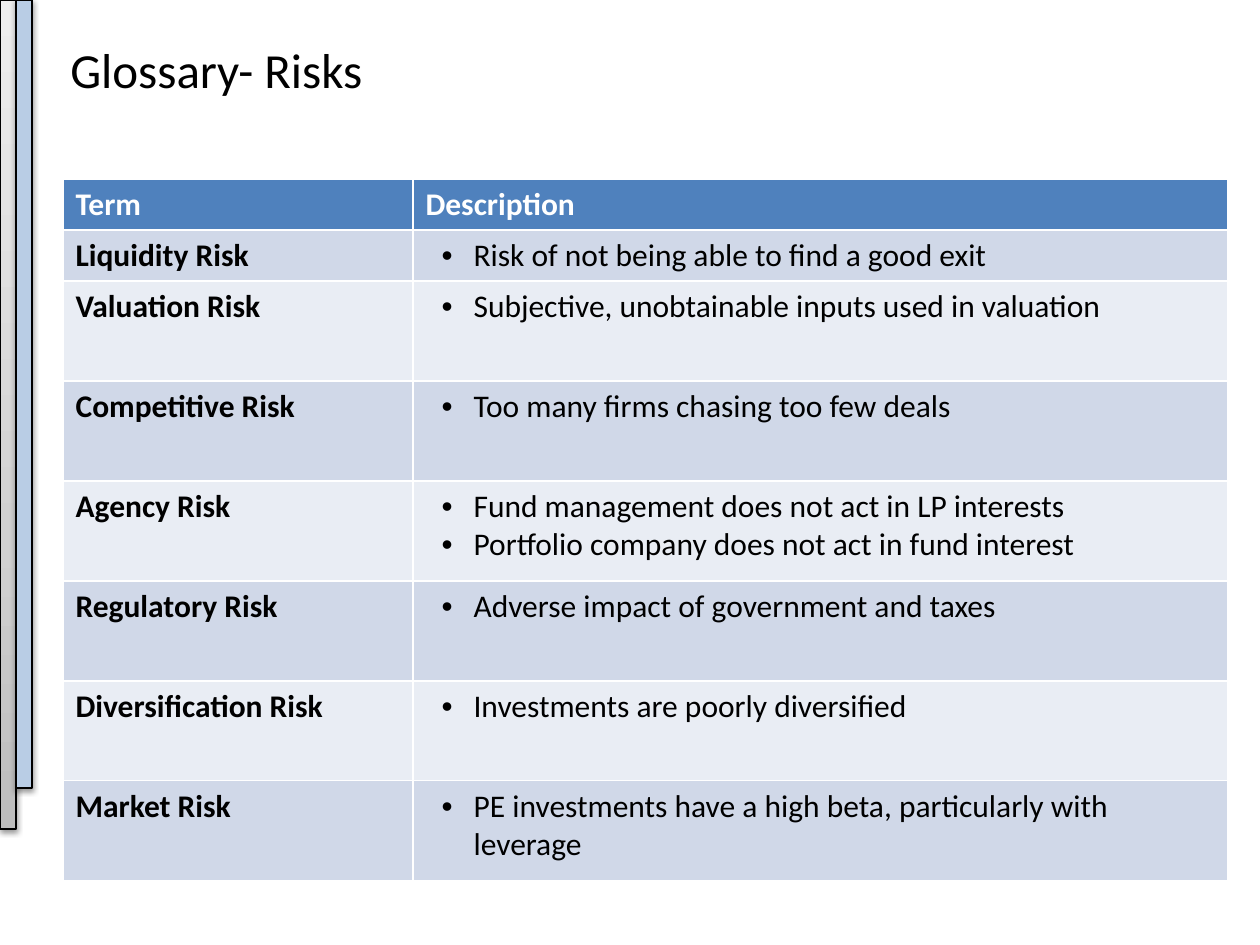
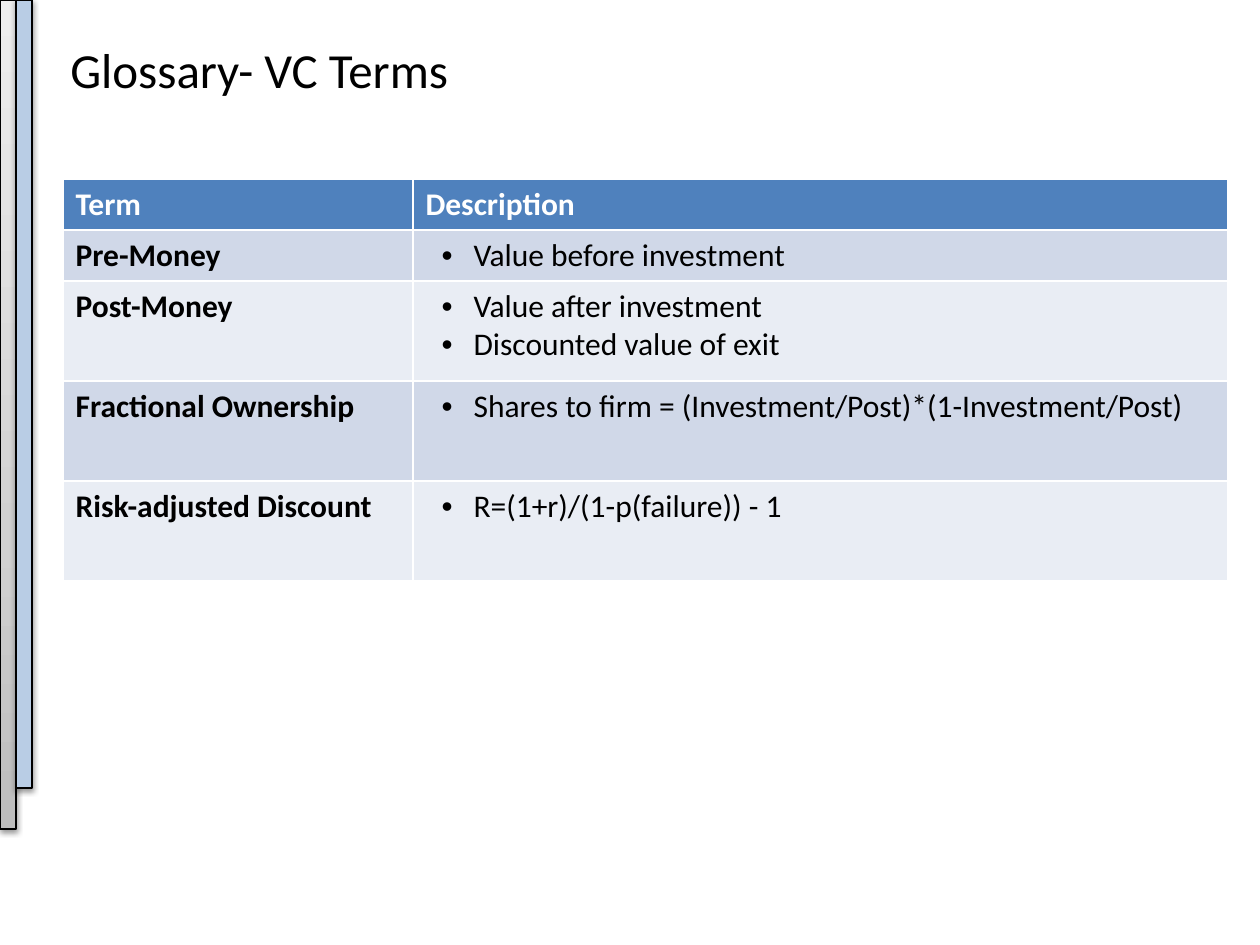
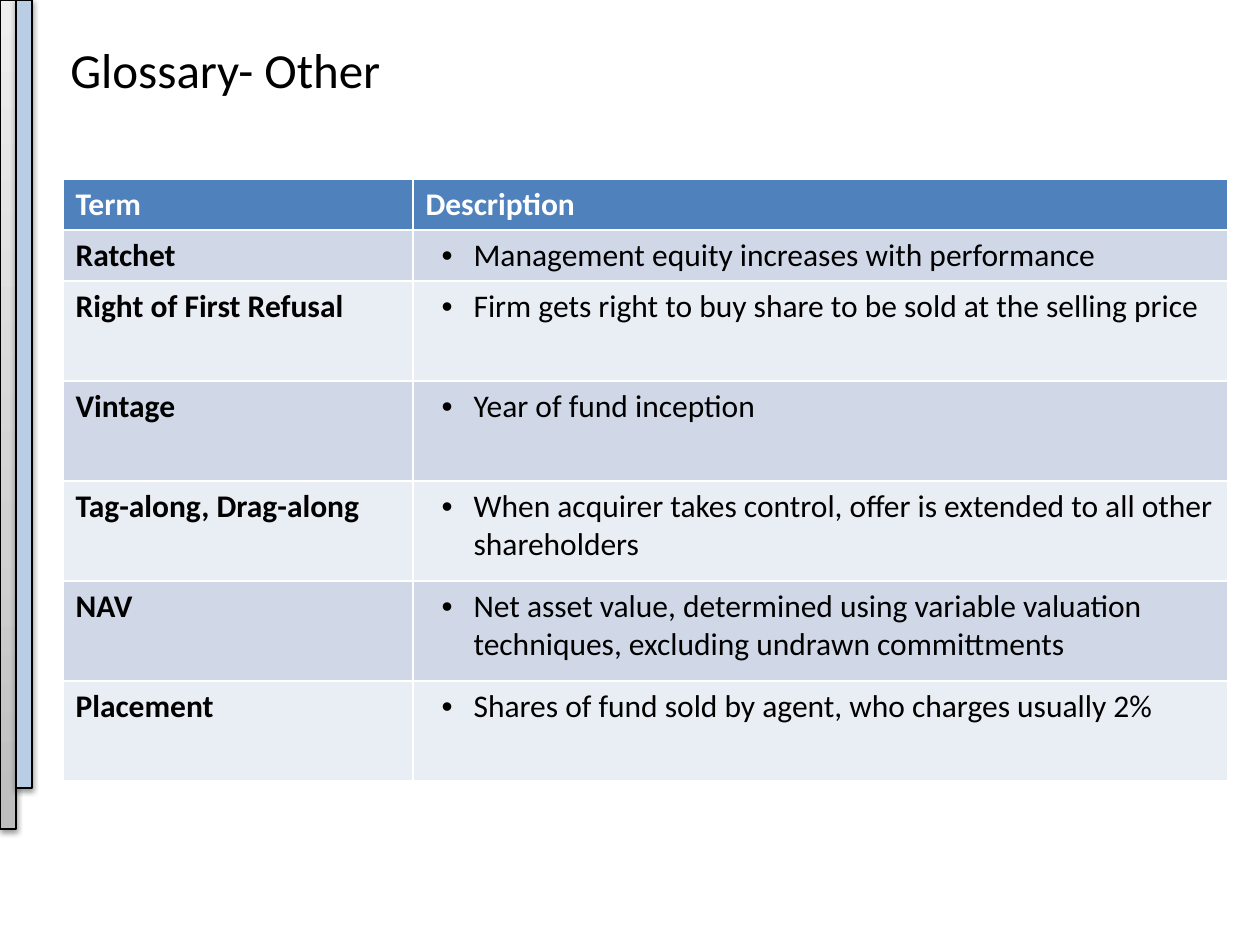
from copy import deepcopy
from dataclasses import dataclass

from lxml.etree import SubElement
from pptx import Presentation
from pptx.dml.color import RGBColor
from pptx.enum.shapes import MSO_SHAPE as Preset
from pptx.enum.text import MSO_ANCHOR as Anchor
from pptx.oxml.ns import qn
from pptx.shapes.autoshape import Shape
from pptx.slide import Slide
from pptx.table import _Cell as Cell
from pptx.text.text import _Paragraph as Paragraph
from pptx.util import Emu, Pt

PX_PER_INCH = 126
FONT = "Calibri"
BLACK, WHITE = "000000", "FFFFFF"
HEADER_FILL = "4F81BD"
ROW_FILLS = ("D0D8E8", "E9EDF4")
TITLE_SIZE, TABLE_SIZE = 28, 18
COLUMN_WIDTHS = (350, 815)
SHORT_ROW, TALL_ROW = 51, 100
HEADINGS = ("Term", "Description")


@dataclass(frozen=True)
class Box:
    left: int
    top: int
    width: int
    height: int


@dataclass(frozen=True)
class Band:
    box: Box
    stops: tuple[tuple[float, str], ...]


@dataclass(frozen=True)
class Entry:
    term: str
    points: tuple[str, ...]


@dataclass(frozen=True)
class Glossary:
    title: str
    entries: tuple[Entry, ...]


TITLE_BOX = Box(58, 21, 908, 95)
TABLE_LEFT, TABLE_TOP = 63, 179
BANDS = (
    Band(Box(0, 0, 16, 829), ((0, "BDBDBD"), (0.35, "D1D1D1"), (1, "EEEEEE"))),
    Band(Box(16, 0, 16, 788), ((0, "B9CDE5"),)),
)

GLOSSARIES = (
    Glossary("Glossary- Risks", (
        Entry("Liquidity Risk", ("Risk of not being able to find a good exit",)),
        Entry("Valuation Risk", ("Subjective, unobtainable inputs used in valuation",)),
        Entry("Competitive Risk", ("Too many firms chasing too few deals",)),
        Entry("Agency Risk", ("Fund management does not act in LP interests",
                              "Portfolio company does not act in fund interest")),
        Entry("Regulatory Risk", ("Adverse impact of government and taxes",)),
        Entry("Diversification Risk", ("Investments are poorly diversified",)),
        Entry("Market Risk",
              ("PE investments have a high beta, particularly with leverage",)),
    )),
    Glossary("Glossary- VC Terms", (
        Entry("Pre-Money", ("Value before investment",)),
        Entry("Post-Money", ("Value after investment", "Discounted value of exit")),
        Entry("Fractional Ownership",
              ("Shares to firm = (Investment/Post)*(1-Investment/Post)",)),
        Entry("Risk-adjusted Discount", ("R=(1+r)/(1-p(failure)) - 1",)),
    )),
    Glossary("Glossary- Other", (
        Entry("Ratchet", ("Management equity increases with performance",)),
        Entry("Right of First Refusal",
              ("Firm gets right to buy share to be sold at the selling price",)),
        Entry("Vintage", ("Year of fund inception",)),
        Entry("Tag-along, Drag-along",
              ("When acquirer takes control, offer is extended to all other shareholders",)),
        Entry("NAV", ("Net asset value, determined using variable valuation "
                      "techniques, excluding undrawn committments",)),
        Entry("Placement", ("Shares of fund sold by agent, who charges usually 2%",)),
    )),
)


def px(length: int) -> Emu:
    return Emu(round(length * 914400 / PX_PER_INCH))


def color(value: str) -> RGBColor:
    return RGBColor.from_string(value)


def place(box: Box) -> tuple[Emu, Emu, Emu, Emu]:
    return px(box.left), px(box.top), px(box.width), px(box.height)


def format_paragraph(paragraph: Paragraph, size: int, text_color: str, bold: bool) -> None:
    for run in paragraph.runs:
        run.font.name = FONT
        run.font.size = Pt(size)
        run.font.bold = bold
        run.font.color.rgb = color(text_color)


def add_bullet(paragraph: Paragraph) -> None:
    paragraph.level = 1
    properties = paragraph._p.get_or_add_pPr()
    properties.set("marL", str(px(48)))
    properties.set("indent", str(px(-32)))
    SubElement(properties, qn("a:buFont"), typeface="Arial")
    SubElement(properties, qn("a:buChar"), char="•")


def fill_upwards(shape: Shape, stops: tuple[tuple[float, str], ...]) -> None:
    """Fill with a gradient whose first stop is at the bottom."""
    shape.fill.gradient()
    shape.fill.gradient_angle = 90
    stop_list = shape.element.spPr.find(".//" + qn("a:gsLst"))
    while len(stop_list) < len(stops):
        stop_list.append(deepcopy(stop_list[0]))
    for stop, (position, value) in zip(shape.fill.gradient_stops, stops):
        stop.position = position
        stop.color.rgb = color(value)


def add_shadow(shape: Shape) -> None:
    shape.shadow.inherit = False
    effects = shape.element.spPr.find(qn("a:effectLst"))
    shadow = SubElement(effects, qn("a:outerShdw"), blurRad=str(Pt(3.1)),
                        dist=str(Pt(1.6)), dir="5400000", rotWithShape="0")
    shade = SubElement(shadow, qn("a:srgbClr"), val=BLACK)
    SubElement(shade, qn("a:alpha"), val="38000")


def add_band(slide: Slide, band: Band) -> None:
    shape = slide.shapes.add_shape(Preset.RECTANGLE, *place(band.box))
    if len(band.stops) > 1:
        fill_upwards(shape, band.stops)
    else:
        shape.fill.solid()
        shape.fill.fore_color.rgb = color(band.stops[0][1])
    shape.line.color.rgb = color(BLACK)
    shape.line.width = Pt(0.75)
    add_shadow(shape)


def add_title(slide: Slide, title: str) -> None:
    text_frame = slide.shapes.add_textbox(*place(TITLE_BOX)).text_frame
    text_frame.word_wrap = True
    text_frame.vertical_anchor = Anchor.MIDDLE
    text_frame.text = title
    format_paragraph(text_frame.paragraphs[0], TITLE_SIZE, BLACK, bold=False)


def fill_cell(cell: Cell, lines: tuple[str, ...], fill: str, text_color: str,
              bold: bool = True, bulleted: bool = False) -> None:
    cell.fill.solid()
    cell.fill.fore_color.rgb = color(fill)
    cell.text_frame.text = "\n".join(lines)
    for paragraph in cell.text_frame.paragraphs:
        if bulleted:
            add_bullet(paragraph)
        format_paragraph(paragraph, TABLE_SIZE, text_color, bold)


def add_glossary_table(slide: Slide, entries: tuple[Entry, ...]) -> None:
    heights = [SHORT_ROW] * 2 + [TALL_ROW] * (len(entries) - 1)
    box = Box(TABLE_LEFT, TABLE_TOP, sum(COLUMN_WIDTHS), sum(heights))
    table = slide.shapes.add_table(len(heights), len(COLUMN_WIDTHS), *place(box)).table
    for column, width in zip(table.columns, COLUMN_WIDTHS):
        column.width = px(width)
    for row, height in zip(table.rows, heights):
        row.height = px(height)
    for column_index, heading in enumerate(HEADINGS):
        fill_cell(table.cell(0, column_index), (heading,), HEADER_FILL, WHITE)
    for index, entry in enumerate(entries):
        fill = ROW_FILLS[index % len(ROW_FILLS)]
        fill_cell(table.cell(index + 1, 0), (entry.term,), fill, BLACK)
        fill_cell(table.cell(index + 1, 1), entry.points, fill, BLACK,
                  bold=False, bulleted=True)


def main() -> None:
    presentation = Presentation()
    presentation.slide_width = px(1260)
    presentation.slide_height = px(945)
    blank_layout = presentation.slide_layouts[6]
    for glossary in GLOSSARIES:
        slide = presentation.slides.add_slide(blank_layout)
        for band in BANDS:
            add_band(slide, band)
        add_title(slide, glossary.title)
        add_glossary_table(slide, glossary.entries)
    presentation.save("out.pptx")


if __name__ == "__main__":
    main()
